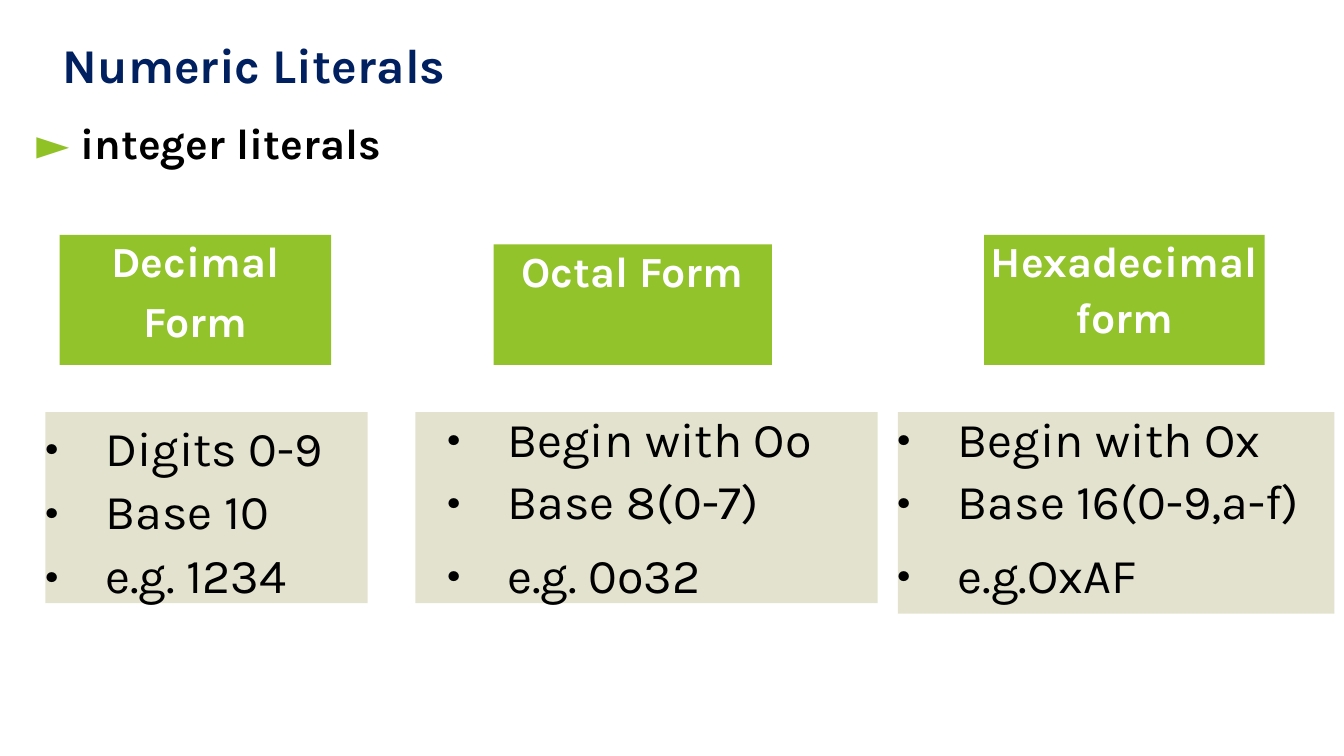
import dataclasses

import lxml.etree
import pptx
import pptx.dml.color
import pptx.enum.shapes
import pptx.enum.text
import pptx.oxml.ns
import pptx.util

Cm = pptx.util.Cm
Pt = pptx.util.Pt
ALIGN = pptx.enum.text.PP_ALIGN


@dataclasses.dataclass(frozen=True)
class Theme:
    font: str = "Karla"
    large: float = 26
    medium: float = 23
    navy: str = "002060"
    black: str = "000000"
    white: str = "FFFFFF"
    marker: str = "90C226"
    header: str = "92C32B"
    panel: str = "E2E2CF"


@dataclasses.dataclass(frozen=True)
class Form:
    """One integer form: header lines, facts and their places in cm."""
    header: tuple
    header_place: tuple
    header_gap: float
    facts: tuple
    panel_place: tuple
    line_heights: tuple
    gaps: tuple
    inset: float = 0


THEME = Theme()
SLIDE_WIDTH = 25.4
HANGING = 1.13
PANEL_TOP = 7.79
FORMS = (
    Form(("Decimal", "Form"), (1.13, 4.44, 5.13, 2.46), 4.2,
         ("Digits 0-9", "Base 10", "e.g. 1234"),
         (0.86, PANEL_TOP, 6.09, 3.61), (34.1, 34.1, 34.1), (0, 0, 0)),
    Form(("Octal Form",), (9.33, 4.62, 5.26, 2.28), 0,
         ("Begin with Oo", "Base 8(0-7)", "e.g. 0o32"),
         (7.85, PANEL_TOP, 8.74, 3.61), (29.3, None, None), (2.1, 8.4, 0), 0.61),
    Form(("Hexadecimal", "form"), (18.6, 4.44, 5.3, 2.46), 2.1,
         ("Begin with Ox", "Base 16(0-9,a-f)", "e.g.OxAF"),
         (16.97, PANEL_TOP, 8.25, 3.81), (29.3, None, None), (2.1, 8.4, 0)),
)


def rgb(value):
    return pptx.dml.color.RGBColor.from_string(value)


def prepare_frame(frame):
    frame.word_wrap = True
    frame.auto_size = pptx.enum.text.MSO_AUTO_SIZE.NONE
    frame.vertical_anchor = pptx.enum.text.MSO_ANCHOR.TOP
    frame.margin_left = frame.margin_right = 0
    frame.margin_top = frame.margin_bottom = 0
    return frame


def style(para, size, color, bold=False, align=ALIGN.LEFT):
    para.alignment = align
    para.font.name = THEME.font
    para.font.size = Pt(size)
    para.font.bold = bold
    para.font.color.rgb = rgb(color)


def paragraphs(frame, lines):
    """Write one paragraph per line and yield each for formatting."""
    for index, line in enumerate(lines):
        para = frame.add_paragraph() if index else frame.paragraphs[0]
        para.text = line
        yield para


def add_bullet(para, inset):
    properties = para._p.get_or_add_pPr()
    properties.set("marL", str(Cm(inset + HANGING)))
    properties.set("indent", str(-Cm(HANGING)))
    for tag, key, value in (("a:buFont", "typeface", THEME.font),
                            ("a:buChar", "char", "•")):
        # Bullet parts precede the default run properties
        part = lxml.etree.Element(pptx.oxml.ns.qn(tag))
        part.set(key, value)
        properties.find(pptx.oxml.ns.qn("a:defRPr")).addprevious(part)


def add_box(page, place, fill):
    box = page.shapes.add_shape(pptx.enum.shapes.MSO_SHAPE.RECTANGLE, *map(Cm, place))
    box.shadow.inherit = False
    box.fill.solid()
    box.fill.fore_color.rgb = rgb(fill)
    box.line.fill.background()
    return prepare_frame(box.text_frame)


def add_title(page, text):
    title = page.shapes.title
    title.left, title.top, title.width, title.height = map(Cm, (0.69, 0.66, 8.05, 1.07))
    frame = prepare_frame(title.text_frame)
    frame.margin_left = Cm(0.5)
    frame.text = text
    style(frame.paragraphs[0], THEME.large, THEME.navy, bold=True)


def add_subtitle(page, text):
    box = page.shapes.add_textbox(*map(Cm, (0.69, 2.2, 8.05, 1)))
    para = prepare_frame(box.text_frame).paragraphs[0]
    style(para, THEME.medium, THEME.black, bold=True)
    for words, color in (("► ", THEME.marker), (text, THEME.black)):
        span = para.add_run()
        span.text = words
        span.font.color.rgb = rgb(color)


def add_form(page, form):
    # Green header
    frame = add_box(page, form.header_place, THEME.header)
    for para in paragraphs(frame, form.header):
        style(para, THEME.medium, THEME.white, bold=True, align=ALIGN.CENTER)
        para.space_after = Pt(form.header_gap)

    # Panel of bulleted facts
    frame = add_box(page, form.panel_place, THEME.panel)
    rows = zip(paragraphs(frame, form.facts), form.line_heights, form.gaps)
    for para, height, gap in rows:
        style(para, THEME.large, THEME.black)
        if height:
            para.line_spacing = Pt(height)
        para.space_after = Pt(gap)
        add_bullet(para, form.inset)


def main():
    deck = pptx.Presentation()
    # Widescreen, 16 to 9
    deck.slide_width, deck.slide_height = Cm(SLIDE_WIDTH), Cm(SLIDE_WIDTH * 9 / 16)
    page = deck.slides.add_slide(deck.slide_layouts.get_by_name("Title Only"))

    # Headings
    add_title(page, "Numeric Literals")
    add_subtitle(page, "integer literals")

    # The three integer forms
    for form in FORMS:
        add_form(page, form)

    deck.save("out.pptx")


if __name__ == "__main__":
    main()
